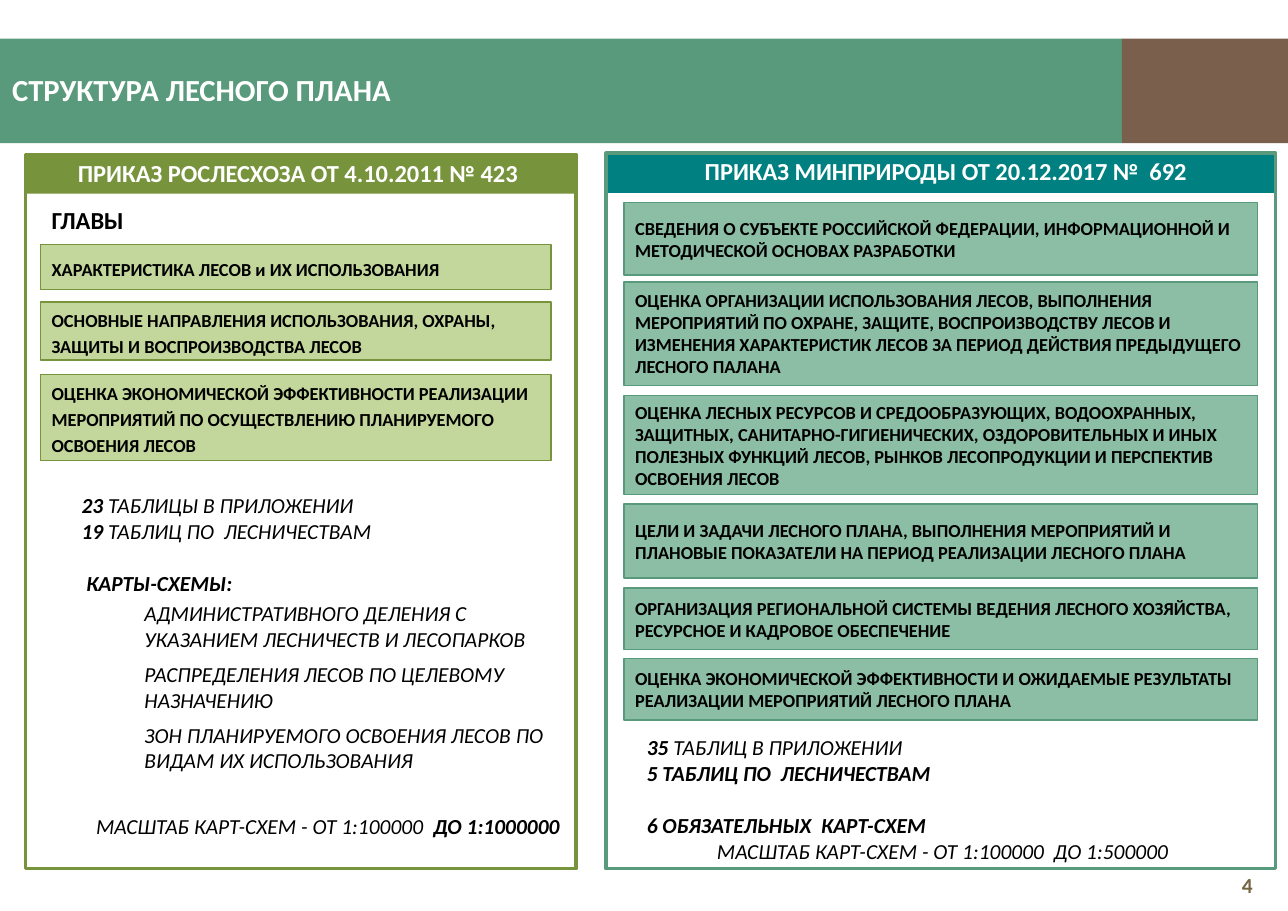
"""Build the slide that compares the two structures of the forest plan."""
from pptx import Presentation
from pptx.dml.color import RGBColor
from pptx.enum.shapes import MSO_SHAPE
from pptx.enum.text import MSO_ANCHOR, PP_ALIGN
from pptx.util import Cm, Pt

WHITE = RGBColor(0xFF, 0xFF, 0xFF)
BLACK = RGBColor(0x00, 0x00, 0x00)
GREEN = RGBColor(0x58, 0x9A, 0x7B)
LIGHT_GREEN = RGBColor(0x8C, 0xBE, 0xA6)
BROWN = RGBColor(0x7B, 0x5F, 0x4D)
NUMBER_BROWN = RGBColor(0x75, 0x65, 0x42)
TEAL = RGBColor(0x00, 0x80, 0x80)
OLIVE = RGBColor(0x77, 0x93, 0x3C)
LIGHT_OLIVE = RGBColor(0xC3, 0xD6, 0x9B)

LEFT = {"alignment": PP_ALIGN.LEFT}
CENTER = {"alignment": PP_ALIGN.CENTER}
RIGHT = {"alignment": PP_ALIGN.RIGHT}
LINE = {"alignment": PP_ALIGN.LEFT, "line_spacing": Pt(17)}
AFTER_GAP = {**LINE, "space_before": Pt(17)}
MAP = {**LEFT, "space_before": Pt(3), "space_after": Pt(3)}
SCALE = {**LINE, **CENTER}
SCALE_AFTER_GAP = {**SCALE, "space_before": Pt(23)}

MIDDLE = {"vertical_anchor": MSO_ANCHOR.MIDDLE}
PADDED = {**MIDDLE, "margin_left": Cm(0.28), "margin_right": Cm(0.28),
          "margin_top": Cm(0.15), "margin_bottom": Cm(0.15)}

OLD_CHAPTERS = [
    (5.64, 1.04, "ХАРАКТЕРИСТИКА ЛЕСОВ и ИХ ИСПОЛЬЗОВАНИЯ"),
    (6.96, 1.35, "ОСНОВНЫЕ НАПРАВЛЕНИЯ ИСПОЛЬЗОВАНИЯ, ОХРАНЫ, ЗАЩИТЫ И "
                 "ВОСПРОИЗВОДСТВА ЛЕСОВ"),
    (8.64, 1.98, "ОЦЕНКА ЭКОНОМИЧЕСКОЙ ЭФФЕКТИВНОСТИ РЕАЛИЗАЦИИ МЕРОПРИЯТИЙ ПО "
                 "ОСУЩЕСТВЛЕНИЮ ПЛАНИРУЕМОГО ОСВОЕНИЯ ЛЕСОВ"),
]
NEW_CHAPTERS = [
    (4.67, 1.68, "СВЕДЕНИЯ О СУБЪЕКТЕ РОССИЙСКОЙ ФЕДЕРАЦИИ, ИНФОРМАЦИОННОЙ И "
                 "МЕТОДИЧЕСКОЙ ОСНОВАХ РАЗРАБОТКИ"),
    (6.5, 2.39, "ОЦЕНКА ОРГАНИЗАЦИИ ИСПОЛЬЗОВАНИЯ ЛЕСОВ, ВЫПОЛНЕНИЯ МЕРОПРИЯТИЙ ПО "
                "ОХРАНЕ, ЗАЩИТЕ, ВОСПРОИЗВОДСТВУ ЛЕСОВ И ИЗМЕНЕНИЯ ХАРАКТЕРИСТИК ЛЕСОВ "
                "ЗА ПЕРИОД ДЕЙСТВИЯ ПРЕДЫДУЩЕГО ЛЕСНОГО ПАЛАНА"),
    (9.12, 2.29, "ОЦЕНКА ЛЕСНЫХ РЕСУРСОВ И СРЕДООБРАЗУЮЩИХ, ВОДООХРАННЫХ, ЗАЩИТНЫХ, "
                 "САНИТАРНО-ГИГИЕНИЧЕСКИХ, ОЗДОРОВИТЕЛЬНЫХ И ИНЫХ ПОЛЕЗНЫХ ФУНКЦИЙ "
                 "ЛЕСОВ, РЫНКОВ ЛЕСОПРОДУКЦИИ И ПЕРСПЕКТИВ ОСВОЕНИЯ ЛЕСОВ"),
    (11.63, 1.7, "ЦЕЛИ И ЗАДАЧИ ЛЕСНОГО ПЛАНА, ВЫПОЛНЕНИЯ МЕРОПРИЯТИЙ И ПЛАНОВЫЕ "
                 "ПОКАЗАТЕЛИ НА ПЕРИОД РЕАЛИЗАЦИИ ЛЕСНОГО ПЛАНА"),
    (13.56, 1.42, "ОРГАНИЗАЦИЯ РЕГИОНАЛЬНОЙ СИСТЕМЫ ВЕДЕНИЯ ЛЕСНОГО ХОЗЯЙСТВА, "
                  "РЕСУРСНОЕ И КАДРОВОЕ ОБЕСПЕЧЕНИЕ"),
    (15.19, 1.42, "ОЦЕНКА ЭКОНОМИЧЕСКОЙ ЭФФЕКТИВНОСТИ И ОЖИДАЕМЫЕ РЕЗУЛЬТАТЫ "
                  "РЕАЛИЗАЦИИ МЕРОПРИЯТИЙ ЛЕСНОГО ПЛАНА"),
]
OLD_NOTES = [
    (LINE, 0, [("23", True), (" ТАБЛИЦЫ В ПРИЛОЖЕНИИ", False)]),
    (LINE, 0, [("19", True), (" ТАБЛИЦ ПО  ЛЕСНИЧЕСТВАМ", False)]),
    (AFTER_GAP, 0.11, [("КАРТЫ-СХЕМЫ:", True)]),
    (MAP, 1.45, [("АДМИНИСТРАТИВНОГО ДЕЛЕНИЯ С УКАЗАНИЕМ ЛЕСНИЧЕСТВ И ЛЕСОПАРКОВ", False)]),
    (MAP, 1.45, [("РАСПРЕДЕЛЕНИЯ ЛЕСОВ ПО ЦЕЛЕВОМУ НАЗНАЧЕНИЮ", False)]),
    (MAP, 1.45, [("ЗОН ПЛАНИРУЕМОГО ОСВОЕНИЯ ЛЕСОВ ПО ВИДАМ ИХ ИСПОЛЬЗОВАНИЯ", False)]),
    (SCALE_AFTER_GAP, 0, [("МАСШТАБ КАРТ-СХЕМ - ОТ 1:100000  ", False),
                          ("ДО 1:1000000", True)]),
]
NEW_NOTES = [
    (LINE, 0, [("35", True), (" ТАБЛИЦ В ПРИЛОЖЕНИИ", False)]),
    (LINE, 0, [("5 ТАБЛИЦ ПО  ЛЕСНИЧЕСТВАМ", True)]),
    (AFTER_GAP, 0, [("6 ОБЯЗАТЕЛЬНЫХ  КАРТ-СХЕМ", True)]),
    (SCALE, 0, [("МАСШТАБ КАРТ-СХЕМ - ОТ 1:100000  ДО 1:500000", False)]),
]


def apply_format(target, values):
    """Set each named attribute of the target."""
    for name, value in values.items():
        setattr(target, name, value)


def write_paragraphs(shape, paragraphs, size, color, frame_format, italic=False):
    """Fill a shape with paragraphs of (format, indent, runs)."""
    text_frame = shape.text_frame
    apply_format(text_frame, {"word_wrap": True, **frame_format})
    for index, (paragraph_format, indent, runs) in enumerate(paragraphs):
        paragraph = text_frame.add_paragraph() if index else text_frame.paragraphs[0]
        apply_format(paragraph, paragraph_format)
        if indent:
            paragraph._p.get_or_add_pPr().set("marL", str(Cm(indent)))
        for text, bold in runs:
            run = paragraph.add_run()
            run.text = text
            apply_format(run.font, {"name": "Calibri", "size": Pt(size),
                                    "bold": bold, "italic": italic})
            run.font.color.rgb = color


def add_box(slide, place, fill=None, line=None, width=1):
    """Add a rectangle with an optional fill and outline."""
    shape = slide.shapes.add_shape(MSO_SHAPE.RECTANGLE, *map(Cm, place))
    shape.shadow.inherit = False
    if fill is None:
        shape.fill.background()
    else:
        shape.fill.solid()
        shape.fill.fore_color.rgb = fill
    if line is None:
        shape.line.fill.background()
    else:
        shape.line.color.rgb = line
        shape.line.width = Pt(width)
    return shape


def add_label(slide, place, text, size, color, paragraph_format, frame_format):
    """Add a text box with one bold line."""
    text_box = slide.shapes.add_textbox(*map(Cm, place))
    write_paragraphs(text_box, [(paragraph_format, 0, [(text, True)])],
                     size, color, frame_format)


def add_chapters(slide, chapters, left, width, fill, line, paragraph_format):
    """Add a column of chapter boxes."""
    for top, height, text in chapters:
        shape = add_box(slide, (left, top, width, height), fill, line)
        write_paragraphs(shape, [(paragraph_format, 0, [(text, True)])], 12, BLACK, MIDDLE)


def add_notes(slide, place, notes):
    """Add the italic notes under the chapters."""
    text_box = slide.shapes.add_textbox(*map(Cm, place))
    write_paragraphs(text_box, notes, 14, BLACK, MIDDLE, italic=True)


def main():
    """Build and save the slide."""
    presentation = Presentation()
    apply_format(presentation, {"slide_width": Cm(29.69), "slide_height": Cm(21.01)})
    slide = presentation.slides.add_slide(presentation.slide_layouts[6])

    add_box(slide, (0, 0.89, 25.86, 2.41), GREEN)
    add_box(slide, (25.86, 0.89, 3.83, 2.41), BROWN)
    add_box(slide, (13.97, 3.56, 15.44, 0.89), TEAL)
    add_box(slide, (0.58, 3.58, 12.7, 0.89), OLIVE)
    add_box(slide, (0.58, 3.56, 12.7, 16.48), line=OLIVE, width=2)
    add_box(slide, (13.97, 3.53, 15.44, 16.51), line=GREEN, width=2)

    add_label(slide, (0, 0.84, 25.78, 2.46), "СТРУКТУРА ЛЕСНОГО ПЛАНА",
              20, WHITE, LEFT, PADDED)
    add_label(slide, (1.47, 3.51, 10.8, 0.94), "ПРИКАЗ РОСЛЕСХОЗА ОТ 4.10.2011 № 423",
              16, WHITE, CENTER, {})
    add_label(slide, (15.24, 3.48, 13.13, 0.94), "ПРИКАЗ МИНПРИРОДЫ ОТ 20.12.2017 №  692",
              16, WHITE, CENTER, {})
    add_label(slide, (0.94, 4.6, 2.34, 0.94), "ГЛАВЫ", 16, BLACK, LEFT, {"word_wrap": False})
    add_label(slide, (27.41, 19.84, 1.75, 1.12), "4", 14, NUMBER_BROWN, RIGHT, PADDED)

    add_chapters(slide, OLD_CHAPTERS, 0.94, 11.76, LIGHT_OLIVE, OLIVE, LINE)
    add_chapters(slide, NEW_CHAPTERS, 14.39, 14.6, LIGHT_GREEN, GREEN, LEFT)
    add_notes(slide, (1.63, 11.51, 11.86, 7.67), OLD_NOTES)
    add_notes(slide, (14.66, 16.87, 14.15, 3.12), NEW_NOTES)

    presentation.save("out.pptx")


if __name__ == "__main__":
    main()
